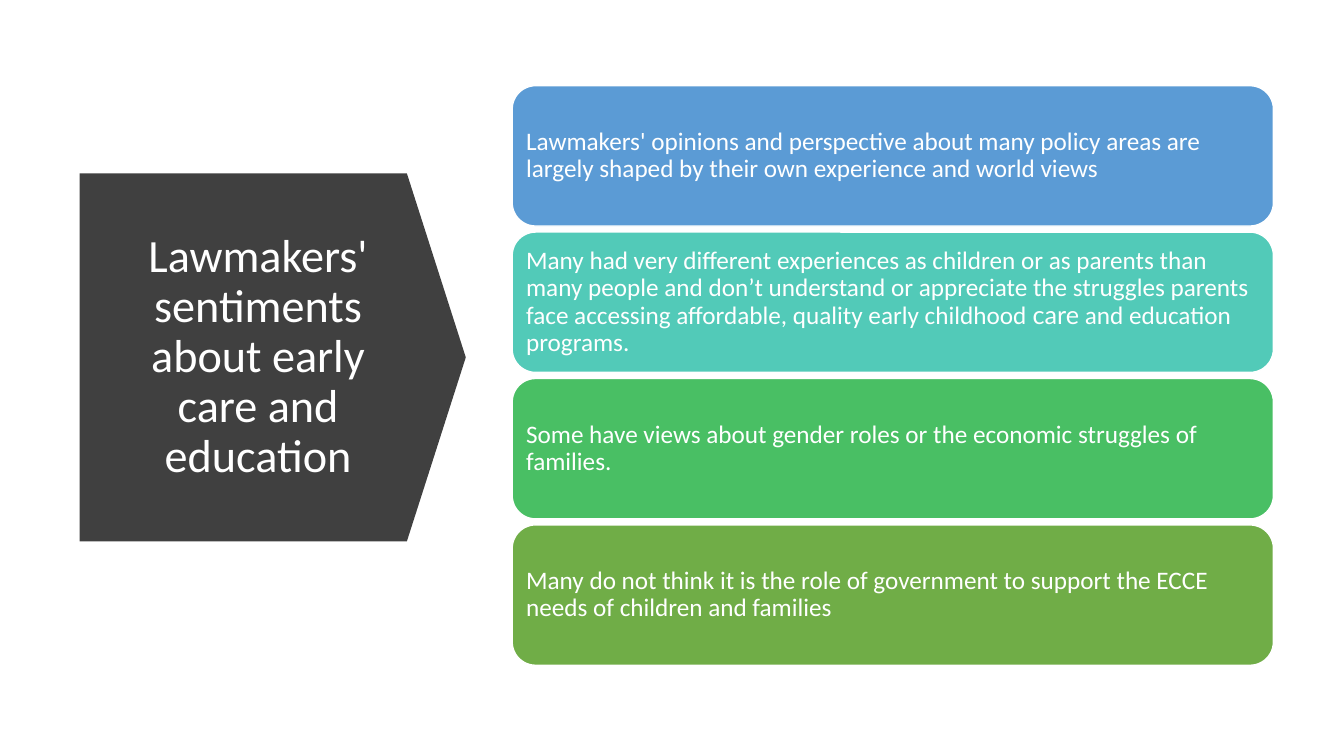
import pptx
import pptx.util
from pptx.dml.color import RGBColor
from pptx.enum.shapes import MSO_SHAPE
from pptx.enum.text import MSO_ANCHOR, MSO_AUTO_SIZE, PP_ALIGN

PX = 9144  # EMU in one px, 100 px to the inch
COLORS = {
    "white": "FFFFFF",
    "charcoal": "404040",
    "blue": "5B9BD5",
    "teal": "52CAB8",
    "green": "49BF64",
    "olive": "70AD47",
}
TITLE = "Lawmakers' sentiments about early care and education"
# Each card: fill colour and its runs of (text, font)
CARDS = [
    ("blue", [("Lawmakers' opinions and perspective about many policy areas are "
               "largely shaped by their own experience and world views", "Calibri")]),
    ("teal", [("Many had very different experiences as children or as parents than "
               "many people and don’t understand or appreciate the struggles parents "
               "face accessing affordable, quality early childhood ", "Calibri"),
              ("care", "Lato"),
              (" and education programs.", "Calibri")]),
    ("green", [("Some have views about gender roles or the economic struggles "
                "of families.", "Calibri")]),
    ("olive", [("Many do not think it is the role of government to support the "
                "ECCE needs of children and families", "Calibri")]),
]


def px(length):
    return pptx.util.Emu(round(length * PX))


def rgb(name):
    return RGBColor.from_string(COLORS[name])


def format_run(run, font_name, size):
    run.font.name = font_name
    run.font.size = pptx.util.Pt(size)
    run.font.color.rgb = rgb("white")


def add_filled_shape(page, kind, box, color):
    shape = page.shapes.add_shape(kind, *[px(length) for length in box])
    shape.shadow.inherit = False
    shape.fill.solid()
    shape.fill.fore_color.rgb = rgb(color)
    return shape


def add_title_arrow(page, box):
    """Fill the box with a right-pointing arrow and lay the title over it."""
    left, top, width, height = box
    # The down arrow is turned by 270 degrees, so its sides are swapped.
    turned_box = (left + (width - height) / 2, top + (height - width) / 2, height, width)
    arrow = add_filled_shape(page, MSO_SHAPE.DOWN_ARROW, turned_box, "charcoal")
    arrow.rotation = 270
    arrow.adjustments[0] = 1
    arrow.adjustments[1] = 0.16
    arrow.line.fill.background()

    title = page.shapes.title
    title._element.addprevious(arrow._element)
    title.left, title.top = px(left + 33), px(top + 43)
    title.width, title.height = px(width - 95), px(height - 86)
    frame = title.text_frame
    frame.text = TITLE
    frame.word_wrap = True
    frame.auto_size = MSO_AUTO_SIZE.NONE
    frame.vertical_anchor = MSO_ANCHOR.MIDDLE
    para = frame.paragraphs[0]
    para.alignment = PP_ALIGN.CENTER
    para.line_spacing = 0.9
    format_run(para.runs[0], "Calibri", 33)


def add_card(page, box, color, spans):
    card = add_filled_shape(page, MSO_SHAPE.ROUNDED_RECTANGLE, box, color)
    card.line.color.rgb = rgb("white")
    card.line.width = pptx.util.Pt(1)
    frame = card.text_frame
    frame.word_wrap = True
    frame.vertical_anchor = MSO_ANCHOR.MIDDLE
    frame.margin_left = frame.margin_right = px(7)
    frame.margin_top = frame.margin_bottom = px(7)
    para = frame.paragraphs[0]
    para.alignment = PP_ALIGN.LEFT
    para.line_spacing = 0.9
    for text, font_name in spans:
        span = para.add_run()
        span.text = text
        format_run(span, font_name, 18)


def add_card_stack(page, box, gap):
    """Share the height of the box equally among the cards."""
    left, top, width, height = box
    card_height = (height - gap * (len(CARDS) - 1)) / len(CARDS)
    for index, (color, spans) in enumerate(CARDS):
        card_top = top + index * (card_height + gap)
        add_card(page, (left, card_top, width, card_height), color, spans)


def main():
    deck = pptx.Presentation()
    deck.slide_width, deck.slide_height = px(1333), px(750)
    page = deck.slides.add_slide(deck.slide_layouts.get_by_name("Title Only"))
    page.background.fill.solid()
    page.background.fill.fore_color.rgb = rgb("white")
    add_title_arrow(page, (79, 172, 383, 365))
    add_card_stack(page, (508, 85, 755, 575), gap=6)
    deck.save("out.pptx")


if __name__ == "__main__":
    main()
